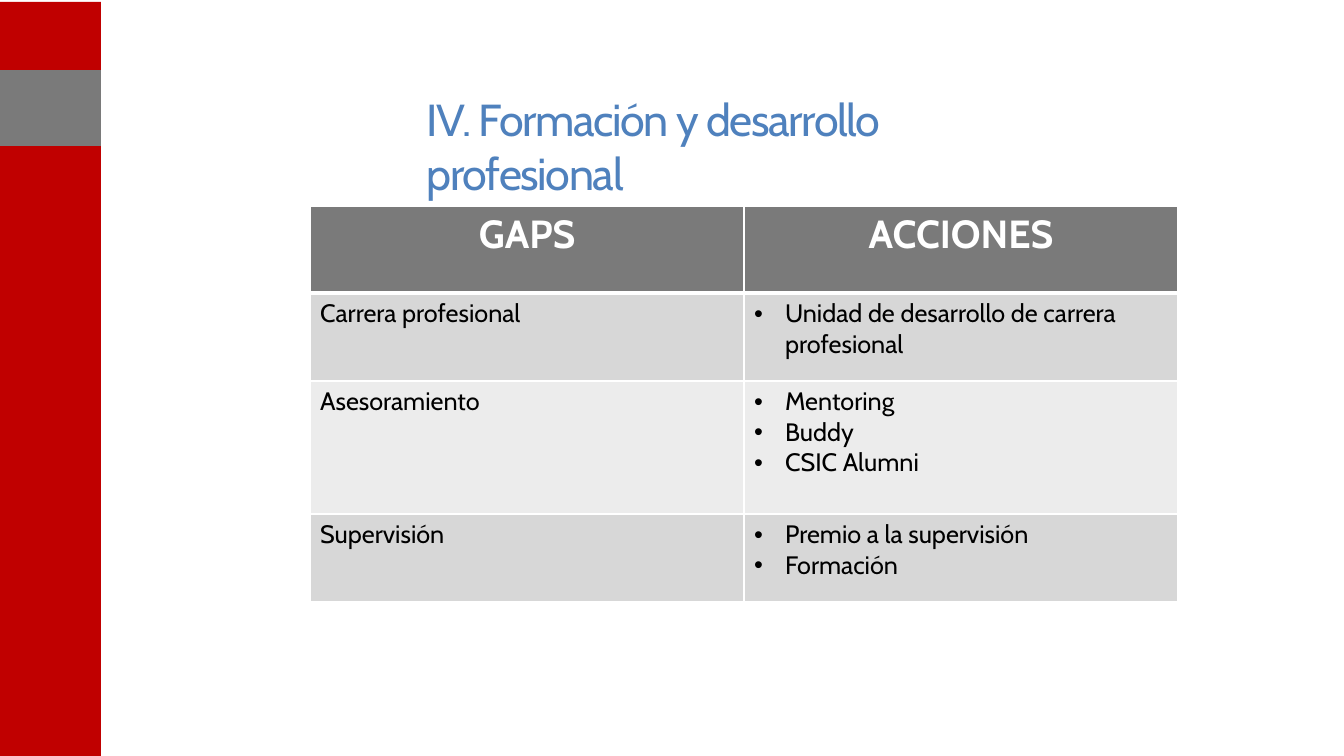
from lxml import etree
from pptx import Presentation
from pptx import util as u
from pptx.dml.color import RGBColor
from pptx.enum import shapes, text
from pptx.oxml.ns import qn

SCALE = 12192000 / 1344
FONT = "Cabin"
COLORS = {
    "red": "C00000",
    "gray": "7A7A7A",
    "blue": "4F81BD",
    "white": "FFFFFF",
    "black": "000000",
    "band_dark": "D7D7D7",
    "band_light": "ECECEC",
}
HEADERS = ["GAPS", "ACCIONES"]
GAPS = [
    ("Carrera profesional", ["Unidad de desarrollo de carrera profesional"]),
    ("Asesoramiento", ["Mentoring", "Buddy", "CSIC Alumni"]),
    ("Supervisión", ["Premio a la supervisión", "Formación"]),
]
ROW_HEIGHTS = [87, 88, 133, 88]


def px(length):
    return u.Emu(round(length * SCALE))


def rgb(name):
    return RGBColor.from_string(COLORS[name])


def style_font(font, size, color, bold=False):
    font.name = FONT
    font.size = u.Pt(size)
    font.bold = bold
    font.color.rgb = rgb(color)


def add_block(page, left, top, width, height, color):
    block = page.shapes.add_shape(
        shapes.MSO_SHAPE.RECTANGLE, px(left), px(top), px(width), px(height))
    block.shadow.inherit = False
    block.fill.solid()
    block.fill.fore_color.rgb = rgb(color)
    block.line.fill.background()


def add_sidebar(page, left, top, width, height):
    add_block(page, left, top, width, height, "red")
    add_block(page, left, top + 68, width, 76, "gray")


def add_title(page, left, top, width, height):
    box = page.shapes.add_textbox(px(left), px(top), px(width), px(height))
    frame = box.text_frame
    frame.word_wrap = True
    frame.vertical_anchor = text.MSO_ANCHOR.TOP
    frame.text = "IV. Formación y desarrollo profesional"
    span = frame.paragraphs[0].runs[0]
    style_font(span.font, 32, "blue")
    span.font._element.set("spc", "-100")


def add_borders(cell, top, bottom):
    properties = cell._tc.get_or_add_tcPr()
    for side, points in (("L", 1), ("R", 1), ("T", top), ("B", bottom)):
        line = etree.SubElement(
            properties, qn(f"a:ln{side}"), w=str(u.Pt(points)))
        fill = etree.SubElement(line, qn("a:solidFill"))
        etree.SubElement(fill, qn("a:srgbClr"), val=COLORS["white"])


def add_bullet(para):
    properties = para._p.get_or_add_pPr()
    properties.set("marL", str(px(31)))
    properties.set("indent", str(-px(31)))
    etree.SubElement(properties, qn("a:buFont"), typeface="Arial")
    etree.SubElement(properties, qn("a:buChar"), char="•")


def fill_cell(cell, lines, color, header=False, bulleted=False, top=1):
    add_borders(cell, top, 3 if header else 1)
    cell.fill.solid()
    cell.fill.fore_color.rgb = rgb(color)
    cell.text_frame.text = "\n".join(lines)
    for para in cell.text_frame.paragraphs:
        if bulleted:
            add_bullet(para)
        para.alignment = text.PP_ALIGN.CENTER if header else text.PP_ALIGN.LEFT
        for span in para.runs:
            if header:
                style_font(span.font, 28, "white", True)
            else:
                style_font(span.font, 18, "black")


def add_gap_table(page, left, top, width):
    table = page.shapes.add_table(
        len(ROW_HEIGHTS), len(HEADERS), px(left), px(top),
        px(width), px(sum(ROW_HEIGHTS))).table
    table.horz_banding = False
    for row, height in zip(table.rows, ROW_HEIGHTS):
        row.height = px(height)
    for index, header in enumerate(HEADERS):
        table.columns[index].width = px(width // len(HEADERS))
        fill_cell(table.cell(0, index), [header], "gray", header=True)
    for index, (gap, actions) in enumerate(GAPS, 1):
        color = "band_dark" if index % 2 else "band_light"
        top_line = 3 if index == 1 else 1
        fill_cell(table.cell(index, 0), [gap], color, top=top_line)
        fill_cell(table.cell(index, 1), actions, color,
                  bulleted=True, top=top_line)


def main():
    deck = Presentation()
    deck.slide_width, deck.slide_height = px(1344), px(756)
    page = deck.slides.add_slide(deck.slide_layouts[6])
    add_sidebar(page, 0, 2, 101, 754)
    add_title(page, 417, 87, 653, 69)
    add_gap_table(page, 310, 206, 868)
    deck.save("out.pptx")


if __name__ == "__main__":
    main()
